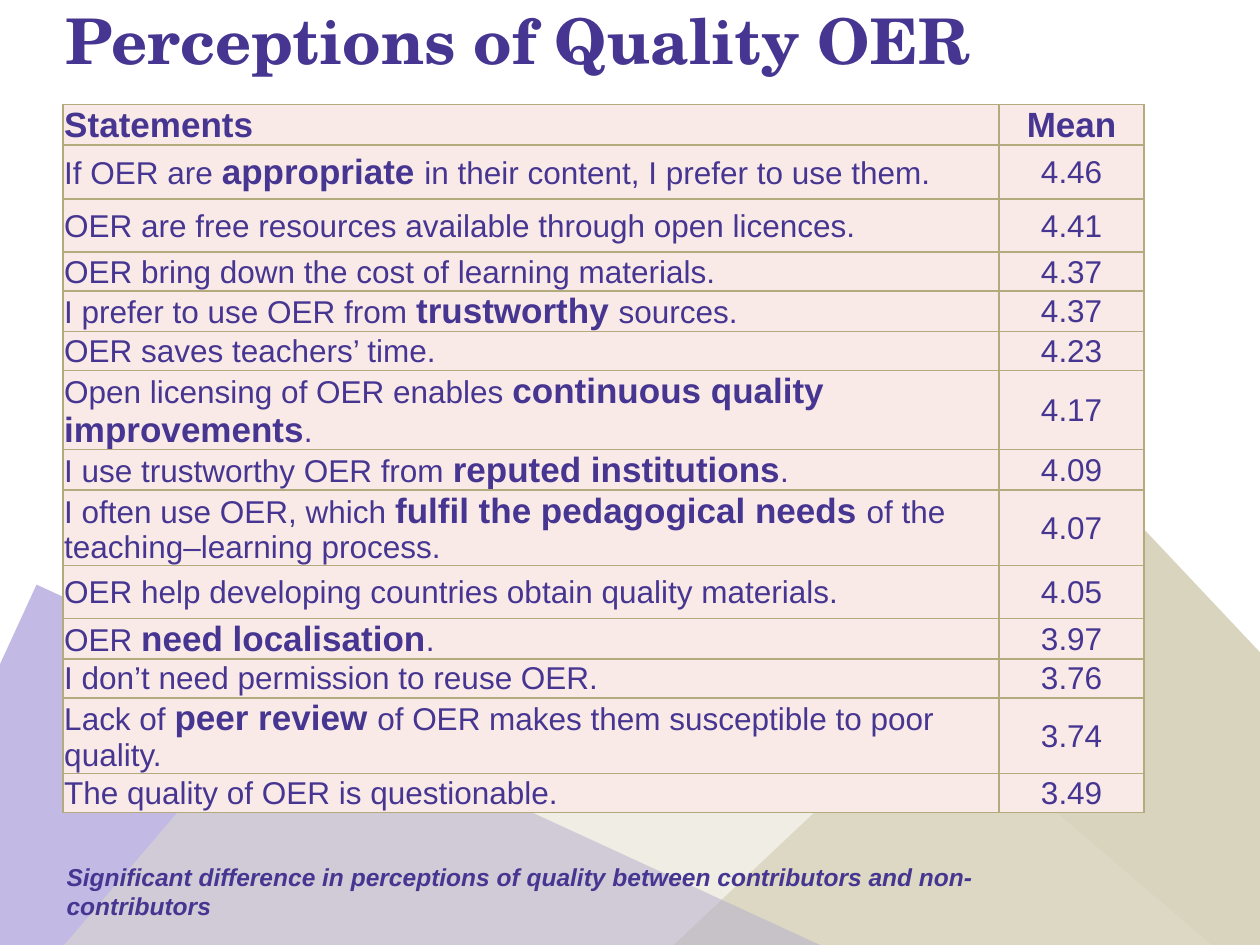
from lxml import etree
from pptx import Presentation
from pptx.dml.color import RGBColor
from pptx.enum.shapes import MSO_SHAPE
from pptx.enum.text import MSO_ANCHOR, MSO_AUTO_SIZE, PP_ALIGN
from pptx.oxml.ns import qn
from pptx.util import Inches, Pt

RECTANGLE = MSO_SHAPE.RECTANGLE
MIDDLE, BOTTOM = MSO_ANCHOR.MIDDLE, MSO_ANCHOR.BOTTOM
LEFT, CENTER = PP_ALIGN.LEFT, PP_ALIGN.CENTER
NO_FIT, GROW = MSO_AUTO_SIZE.NONE, MSO_AUTO_SIZE.SHAPE_TO_FIT_TEXT

INDIGO = RGBColor(0x46, 0x36, 0x91)
OLIVE = RGBColor(0xB3, 0xAA, 0x7E)
VIOLET = RGBColor(0x86, 0x77, 0xCC)
SAND = RGBColor(0xE1, 0xDD, 0xCB)
BLUSH = RGBColor(0xF9, 0xEA, 0xE8)

TITLE = "Perceptions of Quality OER"
FOOTNOTE = ("Significant difference in perceptions of quality between "
            "contributors and non-contributors")
HEADERS = ("Statements", "Mean")

# Each statement alternates plain and emphasised pieces.
STATEMENTS = [
    (("If OER are ", "appropriate ", "in their content, I prefer to use them."), "4.46", 0.43),
    (("OER are free resources available through open licences.",), "4.41", 0.42),
    (("OER bring down the cost of learning materials.",), "4.37", 0.31),
    (("I prefer to use OER from ", "trustworthy ", "sources."), "4.37", 0.31),
    (("OER saves teachers’ time.",), "4.23", 0.31),
    (("Open licensing of OER enables ", "continuous quality improvements", "."), "4.17", 0.44),
    (("I use trustworthy OER from ", "reputed institutions", "."), "4.09", 0.31),
    (("I often use OER, which ", "fulfil the pedagogical needs ",
      "of the teaching–learning process."), "4.07", 0.43),
    (("OER help developing countries obtain quality materials.",), "4.05", 0.42),
    (("OER ", "need localisation", "."), "3.97", 0.31),
    (("I don’t need permission to reuse OER.",), "3.76", 0.31),
    (("Lack of ", "peer review ", "of OER makes them susceptible to poor quality."), "3.74", 0.43),
    (("The quality of OER is questionable.",), "3.49", 0.31),
]
HEADER_HEIGHT = 0.31
COLUMN_WIDTHS = (7.43, 1.15)
BACKDROP_SIZE = (8, 7.68)
BACKDROPS = [(4.92, 5.79, 46.7, OLIVE), (-1.68, 5.96, 24.7, VIOLET), (0.9, 4.68, 40.5, SAND)]


def format_run(run, size, bold, font="Arial", italic=False):
    run.font.name = font
    run.font.size = Pt(size)
    run.font.bold = bold
    run.font.italic = italic
    run.font.color.rgb = INDIGO


def add_backdrop(slide, left, top, rotation, color):
    shape = slide.shapes.add_shape(
        RECTANGLE, Inches(left), Inches(top), *map(Inches, BACKDROP_SIZE))
    shape.rotation = rotation
    shape.shadow.inherit = False
    shape.line.fill.background()
    shape.fill.solid()
    shape.fill.fore_color.rgb = color
    color_element = shape._element.spPr.find(qn("a:solidFill"))[0]
    etree.SubElement(color_element, qn("a:alpha"), val="50000")
    slide.shapes.title._element.addprevious(shape._element)


def add_borders(cell):
    properties = cell._tc.get_or_add_tcPr()
    for index, side in enumerate(("lnL", "lnR", "lnT", "lnB")):
        line = etree.Element(qn(f"a:{side}"), w=str(Pt(1)))
        fill = etree.SubElement(line, qn("a:solidFill"))
        etree.SubElement(fill, qn("a:srgbClr"), val=str(OLIVE))
        properties.insert(index, line)


def fill_cell(cell, pieces, alignment, header):
    cell.fill.solid()
    cell.fill.fore_color.rgb = BLUSH
    cell.vertical_anchor = MIDDLE
    cell.margin_left = cell.margin_right = cell.margin_top = Inches(0.01)
    cell.margin_bottom = 0
    add_borders(cell)
    paragraph = cell.text_frame.paragraphs[0]
    paragraph.alignment = alignment
    for index, piece in enumerate(pieces):
        run = paragraph.add_run()
        run.text = piece
        strong = header or index % 2 == 1
        format_run(run, 20 if strong else 18, strong)


def add_statement_table(slide):
    rows = [((HEADERS[0],), HEADERS[1], HEADER_HEIGHT)] + STATEMENTS
    table = slide.shapes.add_table(
        len(rows), len(COLUMN_WIDTHS), Inches(0.5), Inches(0.83),
        Inches(sum(COLUMN_WIDTHS)), Inches(sum(row[2] for row in rows))).table
    table.first_row = table.horz_banding = False
    for column, width in zip(table.columns, COLUMN_WIDTHS):
        column.width = Inches(width)
    for index, (statement, mean, height) in enumerate(rows):
        table.rows[index].height = Inches(height)
        fill_cell(table.cell(index, 0), statement, LEFT, index == 0)
        fill_cell(table.cell(index, 1), (mean,), CENTER, index == 0)


def main():
    presentation = Presentation()
    presentation.slide_width, presentation.slide_height = Inches(10), Inches(7.5)
    slide = presentation.slides.add_slide(presentation.slide_layouts[5])

    title = slide.shapes.title
    title.left, title.top, title.width, title.height = map(Inches, (0.42, -0.72, 9.25, 1.38))
    title.text_frame.text = TITLE
    title.text_frame.vertical_anchor = BOTTOM
    title.text_frame.auto_size = NO_FIT
    title.text_frame.paragraphs[0].alignment = LEFT
    format_run(title.text_frame.paragraphs[0].runs[0], 36, True, "TeX Gyre Schola")

    for backdrop in BACKDROPS:
        add_backdrop(slide, *backdrop)
    add_statement_table(slide)

    footnote = slide.shapes.add_textbox(*map(Inches, (0.43, 6.79, 8.5, 0.34)))
    footnote.text_frame.word_wrap = True
    footnote.text_frame.auto_size = GROW
    footnote.text_frame.text = FOOTNOTE
    format_run(footnote.text_frame.paragraphs[0].runs[0], 14, True, italic=True)

    presentation.save("out.pptx")


if __name__ == "__main__":
    main()
